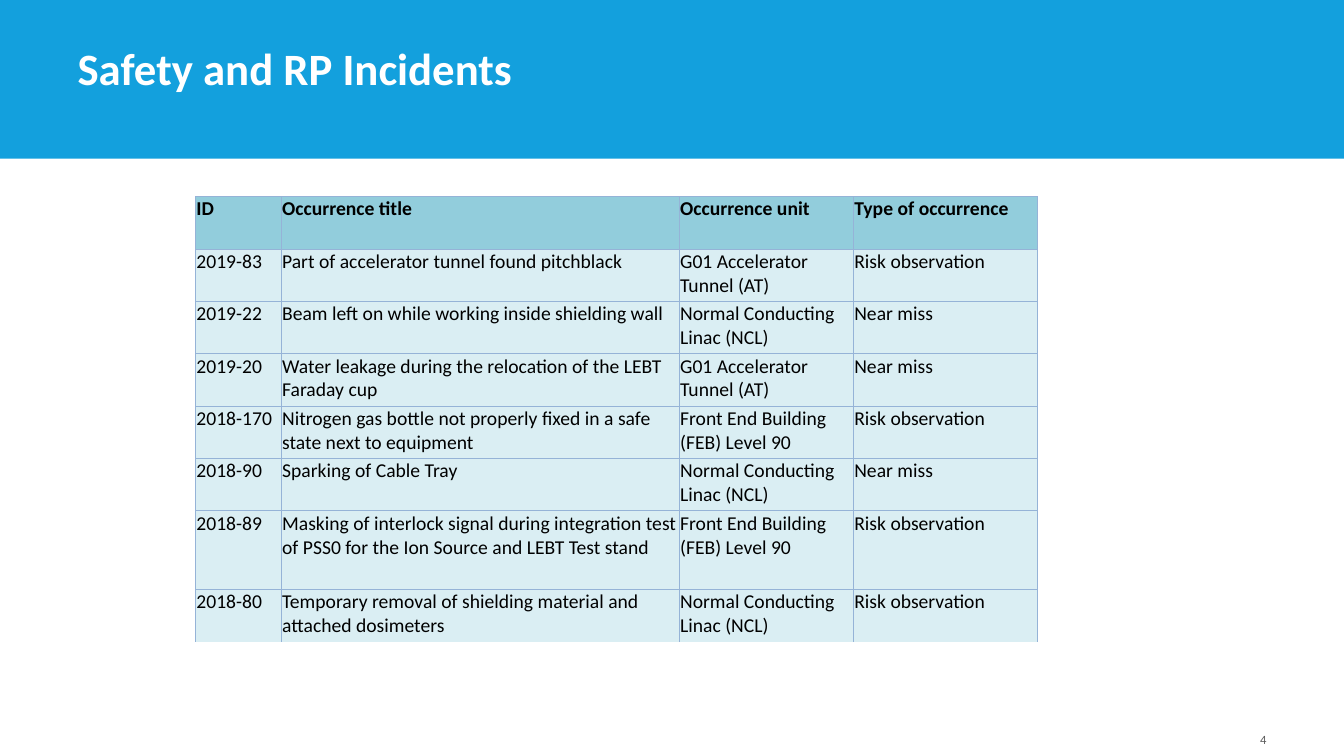
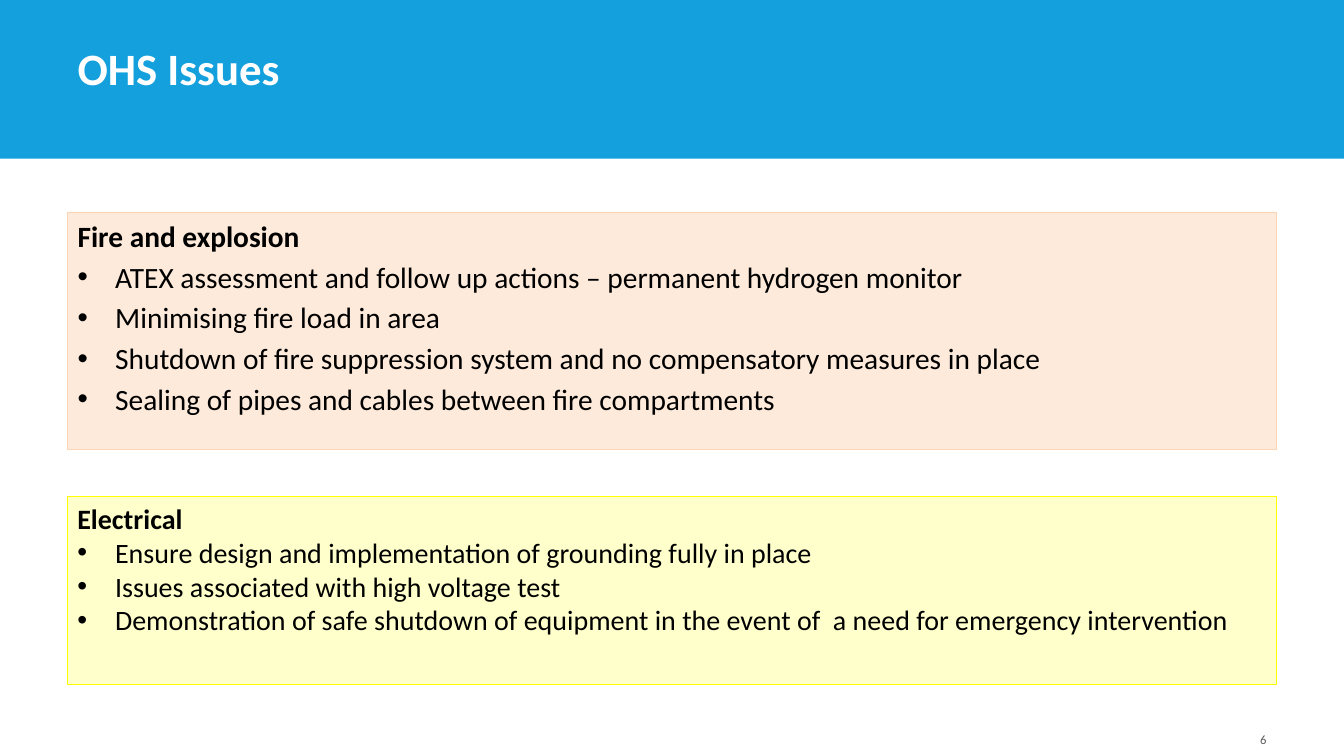
from lxml.etree import SubElement
from pptx import Presentation
from pptx.dml.color import RGBColor
from pptx.enum.shapes import MSO_SHAPE
from pptx.enum.text import MSO_ANCHOR, MSO_AUTO_SIZE, PP_ALIGN
from pptx.oxml.ns import qn
from pptx.util import Cm, Pt

FONT = "Calibri"
BLACK, WHITE, GREY = "000000", "FFFFFF", "595959"
BAND_BLUE = "13A0DD"
HEADER_FILL, ROW_FILL, GRID = "92CDDC", "DAEEF3", "95B3D7"
FIRE_FILL, FIRE_LINE = "FDEADA", "FCD5B5"
ELECTRICAL_FILL, ELECTRICAL_LINE = "FFFFCC", "FFFF00"

SLIDE_WIDTH, SLIDE_HEIGHT = 33.87, 19.05
MARGIN = 1.7
CONTENT_WIDTH = SLIDE_WIDTH - 2 * MARGIN
BULLET_INDENT = 0.95
ROW_HEIGHT = 1.32
TITLE_ONLY, TITLE_AND_BODY = 5, 1

INCIDENT_COLUMNS = [("ID", 2.16), ("Occurrence title", 10.03),
                    ("Occurrence unit", 4.39), ("Type of occurrence", 4.62)]
TUNNEL = "G01 Accelerator Tunnel (AT)"
LINAC = "Normal Conducting Linac (NCL)"
FRONT_END = "Front End Building (FEB) Level 90"
RISK, NEAR_MISS = "Risk observation", "Near miss"
INCIDENTS = [
    ("2019-83", "Part of accelerator tunnel found pitchblack", TUNNEL, RISK),
    ("2019-22", "Beam left on while working inside shielding wall", LINAC, NEAR_MISS),
    ("2019-20", "Water leakage during the relocation of the LEBT Faraday cup",
     TUNNEL, NEAR_MISS),
    ("2018-170", "Nitrogen gas bottle not properly fixed in a safe state next to equipment",
     FRONT_END, RISK),
    ("2018-90", "Sparking of Cable Tray", LINAC, NEAR_MISS),
    ("2018-89", "Masking of interlock signal during integration test of PSS0 "
     "for the Ion Source and LEBT Test stand", FRONT_END, RISK),
    ("2018-80", "Temporary removal of shielding material and attached dosimeters",
     LINAC, RISK),
]
TALL_ROW = 6

FIRE_ISSUES = [
    "ATEX assessment and follow up actions – permanent hydrogen monitor",
    "Minimising fire load in area",
    "Shutdown of fire suppression system and no compensatory measures in place",
    "Sealing of pipes and cables between fire compartments",
]
ELECTRICAL_ISSUES = [
    "Ensure design and implementation of grounding fully in place",
    "Issues associated with high voltage test",
    "Demonstration of safe shutdown of equipment in the event of  a need "
    "for emergency intervention",
]


def rgb(value):
    return RGBColor.from_string(value)


def place(shape, left, top, width, height):
    shape.left, shape.top = Cm(left), Cm(top)
    shape.width, shape.height = Cm(width), Cm(height)


def paint(shape, fill, line=None):
    shape.fill.solid()
    shape.fill.fore_color.rgb = rgb(fill)
    if line:
        shape.line.color.rgb = rgb(line)
        shape.line.width = Pt(0.75)
    else:
        shape.line.fill.background()


def set_bullet(paragraph, bullet):
    """Give the paragraph a hanging bullet, or clear an inherited one."""
    properties = paragraph._p.get_or_add_pPr()
    indent = Cm(BULLET_INDENT) if bullet else 0
    properties.set("marL", str(indent))
    properties.set("indent", str(-indent))
    if bullet:
        SubElement(properties, qn("a:buFont")).set("typeface", "Arial")
        SubElement(properties, qn("a:buChar")).set("char", "•")
    else:
        SubElement(properties, qn("a:buNone"))


def write(paragraph, text, size, color=BLACK, bold=False, align=PP_ALIGN.LEFT,
          bullet=False, before=0):
    paragraph.text = text
    set_bullet(paragraph, bullet)
    paragraph.alignment = align
    paragraph.space_before = Pt(before)
    font = paragraph.font
    font.name, font.size, font.bold = FONT, Pt(size), bold
    font.color.rgb = rgb(color)


def prepare_frame(shape, anchor):
    frame = shape.text_frame
    frame.word_wrap = True
    frame.auto_size = MSO_AUTO_SIZE.NONE
    frame.vertical_anchor = anchor
    return frame


def add_master_band(prs, slide):
    """Draw the title band and move it to the master, behind every slide."""
    band = slide.shapes.add_shape(MSO_SHAPE.RECTANGLE, 0, 0, Cm(SLIDE_WIDTH), Cm(4))
    band.shadow.inherit = False
    paint(band, BAND_BLUE)
    band.element.nvSpPr.cNvPr.set("id", "100")
    prs.slide_master.shapes.element.insert(2, band.element)


def add_slide(prs, layout, title, number):
    slide = prs.slides.add_slide(prs.slide_layouts[layout])
    heading = slide.shapes.title
    place(heading, MARGIN, 0.97, 26.44, 1.55)
    write(prepare_frame(heading, MSO_ANCHOR.BOTTOM).paragraphs[0], title, 32,
          color=WHITE, bold=True)
    page_width = 7.9
    page = slide.shapes.add_textbox(Cm(SLIDE_WIDTH - MARGIN - page_width), Cm(17.93),
                                    Cm(page_width), Cm(1.02))
    write(prepare_frame(page, MSO_ANCHOR.BOTTOM).paragraphs[0], str(number), 9,
          color=GREY, align=PP_ALIGN.RIGHT)
    return slide


def set_borders(cell, open_bottom):
    properties = cell._tc.get_or_add_tcPr()
    for side in "LRTB":
        border = SubElement(properties, qn(f"a:ln{side}"), w=str(Pt(0.5)))
        if side == "B" and open_bottom:
            SubElement(border, qn("a:noFill"))
        else:
            fill = SubElement(border, qn("a:solidFill"))
            SubElement(fill, qn("a:srgbClr")).set("val", GRID)


def fill_cell(cell, text, header, last):
    cell.margin_left = cell.margin_right = cell.margin_top = Cm(0.02)
    cell.margin_bottom = 0
    set_borders(cell, open_bottom=last)
    cell.fill.solid()
    cell.fill.fore_color.rgb = rgb(HEADER_FILL if header else ROW_FILL)
    write(cell.text_frame.paragraphs[0], text, 14, bold=header)


def add_incident_table(slide, left, top):
    headings, widths = zip(*INCIDENT_COLUMNS)
    rows = [headings, *INCIDENTS]
    table = slide.shapes.add_table(len(rows), len(widths), Cm(left), Cm(top),
                                   Cm(sum(widths)), Cm(ROW_HEIGHT * len(rows))).table
    table.horz_banding = False
    for column, width in zip(table.columns, widths):
        column.width = Cm(width)
    for r, texts in enumerate(rows):
        table.rows[r].height = Cm(ROW_HEIGHT * (1.5 if r == TALL_ROW else 1))
        for c, text in enumerate(texts):
            fill_cell(table.cell(r, c), text, header=r == 0, last=r == len(rows) - 1)


def fill_issue_panel(panel, top, height, heading, issues, size, fill, line, before=0):
    place(panel, MARGIN, top, CONTENT_WIDTH, height)
    paint(panel, fill, line)
    frame = prepare_frame(panel, MSO_ANCHOR.TOP)
    write(frame.paragraphs[0], heading, size, bold=True)
    for issue in issues:
        write(frame.add_paragraph(), issue, size, bullet=True, before=before)


def add_incidents_slide(prs):
    slide = add_slide(prs, TITLE_ONLY, "Safety and RP Incidents", 4)
    add_incident_table(slide, 4.93, 4.95)
    return slide


def add_issues_slide(prs):
    slide = add_slide(prs, TITLE_AND_BODY, "OHS Issues", 6)
    fill_issue_panel(slide.placeholders[1], 5.36, 5.97, "Fire and explosion",
                     FIRE_ISSUES, 21, FIRE_FILL, FIRE_LINE, before=4)
    electrical = slide.shapes.add_shape(MSO_SHAPE.RECTANGLE, 0, 0, 0, 0)
    electrical.shadow.inherit = False
    fill_issue_panel(electrical, 12.52, 4.72, "Electrical", ELECTRICAL_ISSUES, 20,
                     ELECTRICAL_FILL, ELECTRICAL_LINE)


def main():
    prs = Presentation()
    prs.slide_width, prs.slide_height = Cm(SLIDE_WIDTH), Cm(SLIDE_HEIGHT)
    add_master_band(prs, add_incidents_slide(prs))
    add_issues_slide(prs)
    prs.save("out.pptx")


if __name__ == "__main__":
    main()
